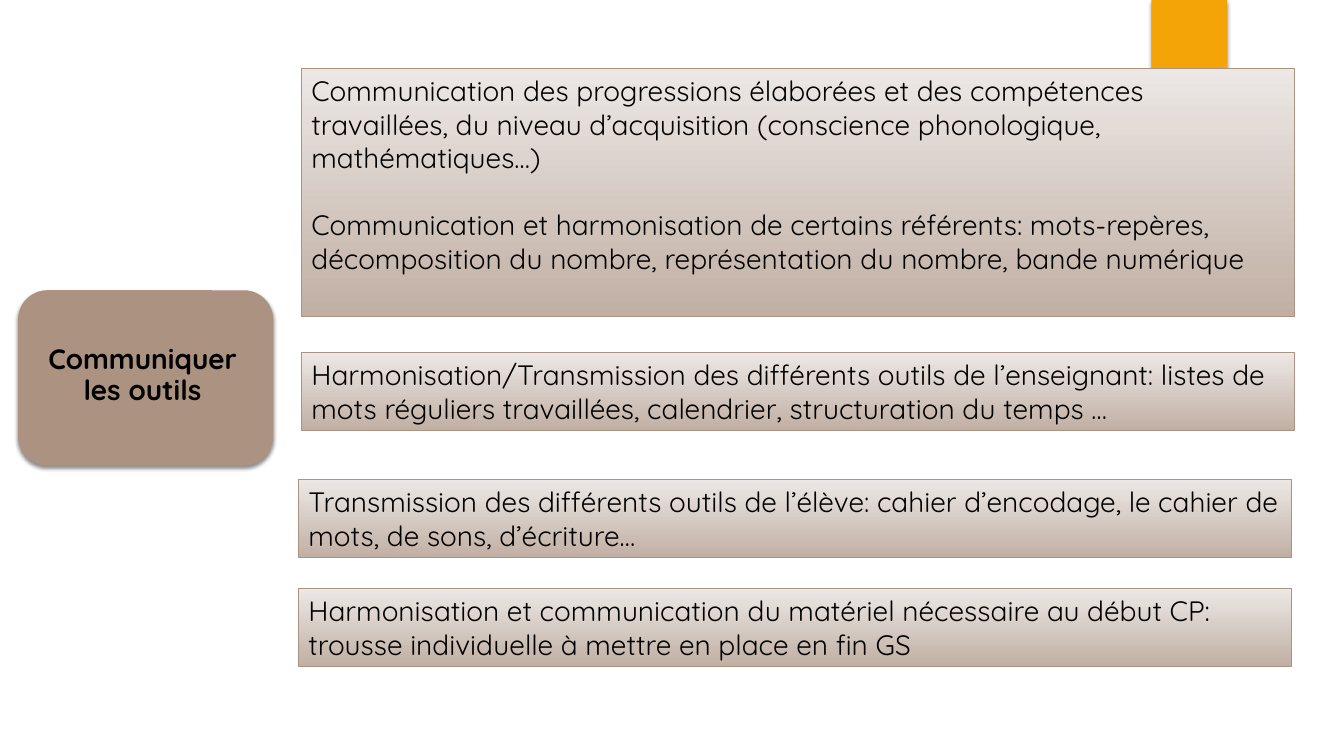
"""Build the slide on sharing teaching tools between classes."""
from lxml import etree
from pptx import Presentation
from pptx.dml.color import RGBColor
from pptx.enum import shapes, text
from pptx.oxml import ns
from pptx.util import Inches, Pt

TITLE = "Communiquer les outils"
PANELS = [
    (2.99, 0.68, 2.46, [
        "Communication des progressions élaborées et des compétences travaillées, "
        "du niveau d’acquisition (conscience phonologique, mathématiques…)",
        "Communication et harmonisation de certains référents: mots-repères, "
        "décomposition du nombre, représentation du nombre, bande numérique"]),
    (2.99, 3.5, 0.77, [
        "Harmonisation/Transmission des différents outils de l’enseignant: listes de "
        "mots réguliers travaillées, calendrier, structuration du temps …"]),
    (2.96, 4.76, 0.77, [
        "Transmission des différents outils de l’élève: cahier d’encodage, "
        "le cahier de mots, de sons, d’écriture…"]),
    (2.96, 5.84, 0.77, [
        "Harmonisation et communication du matériel nécessaire au début CP: "
        "trousse individuelle à mettre en place en fin GS"]),
]
PANEL_WIDTH = 9.85
FONT = "Quicksand"
COLORS = {"orange": "F5A408", "brown": "AB9281", "light": "ECE8E5",
          "dark": "C1AFA4", "text": "000000", "shadow": "000000"}


def rgb(name):
    return RGBColor.from_string(COLORS[name])


def add_box(s, kind, *place):
    sp = s.shapes.add_shape(kind, *map(Inches, place))
    sp.shadow.inherit = False
    return sp


def add_block(s, kind, color, *place):
    sp = add_box(s, kind, *place)
    sp.fill.solid()
    sp.fill.fore_color.rgb = rgb(color)
    sp.line.fill.background()
    effects = sp.element.spPr.find(ns.qn("a:effectLst"))
    shadow = etree.SubElement(effects, ns.qn("a:outerShdw"), blurRad=str(Pt(3)),
                              dist=str(Pt(2)), dir="5400000", rotWithShape="0")
    color_el = etree.SubElement(shadow, ns.qn("a:srgbClr"), val=COLORS["shadow"])
    etree.SubElement(color_el, ns.qn("a:alpha"), val="45000")


def format_text(p, bold=False):
    p.font.name = FONT
    p.font.size = Pt(20)
    p.font.bold = bold
    p.font.color.rgb = rgb("text")


def add_panel(s, left, top, height, paragraphs):
    sp = add_box(s, shapes.MSO_SHAPE.RECTANGLE, left, top, PANEL_WIDTH, height)
    sp.fill.gradient()
    sp.fill.gradient_angle = 270
    for stop, name, position in zip(sp.fill.gradient_stops, ("light", "dark"), (0, 1)):
        stop.color.rgb = rgb(name)
        stop.position = position
    sp.line.color.rgb = rgb("brown")
    sp.line.width = Pt(0.75)
    tf = sp.text_frame
    tf.word_wrap = True
    tf.vertical_anchor = text.MSO_ANCHOR.TOP
    tf.text = "\n".join(paragraphs)
    for i, p in enumerate(tf.paragraphs):
        p.alignment = text.PP_ALIGN.LEFT
        if i:
            p.space_before = Pt(24)
        format_text(p)


def place_title(s):
    title = s.shapes.title
    title.element.getparent().append(title.element)
    title.left, title.top, title.width, title.height = map(Inches, (0.15, 3.27, 2.53, 0.94))
    tf = title.text_frame
    tf.text = TITLE
    tf.word_wrap = True
    tf.auto_size = text.MSO_AUTO_SIZE.NONE
    tf.vertical_anchor = text.MSO_ANCHOR.TOP
    tf.margin_left = tf.margin_right = tf.margin_top = Inches(0.16)
    tf.margin_bottom = 0
    p = tf.paragraphs[0]
    p.alignment = text.PP_ALIGN.CENTER
    p.line_spacing = 0.9
    format_text(p, bold=True)


def main():
    prs = Presentation()
    prs.slide_width, prs.slide_height = Inches(13.33), Inches(7.5)
    s = prs.slides.add_slide(prs.slide_layouts[5])
    add_block(s, shapes.MSO_SHAPE.RECTANGLE, "orange", 11.42, 0, 0.75, 1.25)
    add_block(s, shapes.MSO_SHAPE.ROUNDED_RECTANGLE, "brown", 0.18, 2.88, 2.53, 1.74)
    place_title(s)
    for panel in PANELS:
        add_panel(s, *panel)
    prs.save("out.pptx")


if __name__ == "__main__":
    main()
